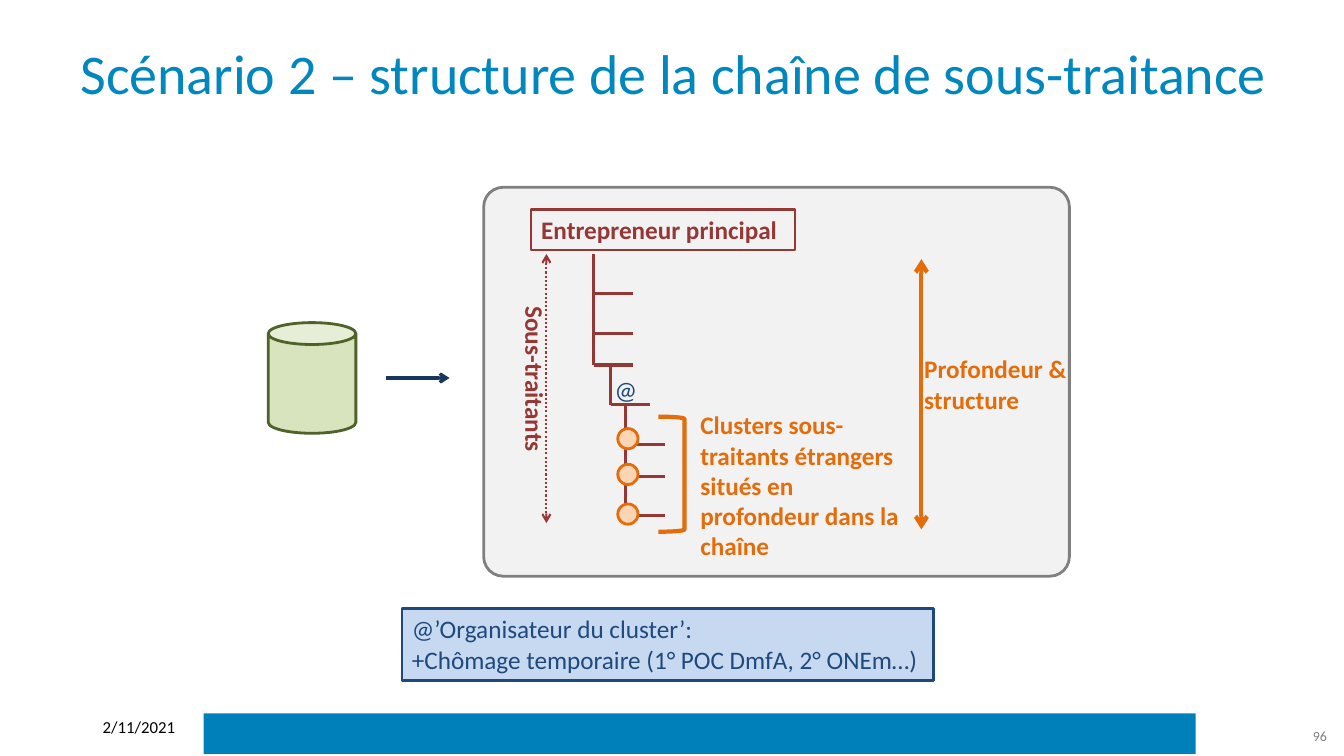
from pptx import Presentation
from pptx.dml.color import RGBColor
from pptx.enum.dml import MSO_LINE
from pptx.enum.shapes import MSO_CONNECTOR, MSO_SHAPE
from pptx.enum.text import MSO_ANCHOR, PP_ALIGN
from pptx.oxml.ns import qn
from pptx.util import Cm, Pt
from lxml import etree

LEFT, CENTER, RIGHT = PP_ALIGN.LEFT, PP_ALIGN.CENTER, PP_ALIGN.RIGHT
TOP, MIDDLE = MSO_ANCHOR.TOP, MSO_ANCHOR.MIDDLE
RECT, ROUND, CAN = MSO_SHAPE.RECTANGLE, MSO_SHAPE.ROUNDED_RECTANGLE, MSO_SHAPE.CAN
OVAL, BRACKET = MSO_SHAPE.OVAL, MSO_SHAPE.RIGHT_BRACKET
STRAIGHT, DOTS = MSO_CONNECTOR.STRAIGHT, MSO_LINE.ROUND_DOT

FONT = "Calibri"
RED, ORANGE, NAVY, GREY = "953735", "E46C0A", "1F497D", "808080"


def rgb(code):
    return RGBColor.from_string(code)


def write(frame, text, size, color, bold=False, align=LEFT, anchor=TOP, wrap=True):
    frame.text = text
    frame.word_wrap = wrap
    frame.vertical_anchor = anchor
    for para in frame.paragraphs:
        para.alignment = align
        for run in para.runs:
            font = run.font
            font.name, font.size, font.bold = FONT, Pt(size), bold
            font.color.rgb = rgb(color)


def shape(slide, kind, x, y, w, h, fill=None, line=None, width=2):
    item = slide.shapes.add_shape(kind, Cm(x), Cm(y), Cm(w), Cm(h))
    item.shadow.inherit = False
    if fill:
        item.fill.solid()
        item.fill.fore_color.rgb = rgb(fill)
    else:
        item.fill.background()
    if line:
        item.line.color.rgb = rgb(line)
        item.line.width = Pt(width)
    else:
        item.line.fill.background()
    return item


def label(slide, x, y, w, h, text, size, color, **style):
    box = slide.shapes.add_textbox(Cm(x), Cm(y), Cm(w), Cm(h))
    write(box.text_frame, text, size, color, **style)
    return box


def line(slide, x1, y1, x2, y2, color, width=2.25, ends=()):
    item = slide.shapes.add_connector(STRAIGHT, Cm(x1), Cm(y1), Cm(x2), Cm(y2))
    item.line.color.rgb = rgb(color)
    item.line.width = Pt(width)
    props = item.line._get_or_add_ln()
    for end in ends:
        etree.SubElement(props, qn("a:" + end), type="arrow")
    etree.SubElement(item._element.spPr, qn("a:effectLst"))
    return item


def title(slide, x, y, w, h):
    head = slide.shapes.title
    head.left, head.top, head.width, head.height = Cm(x), Cm(y), Cm(w), Cm(h)
    frame = head.text_frame
    frame.margin_left = frame.margin_right = 0
    write(frame, "Scénario 2 – structure de la chaîne de sous-traitance",
          40, "0087BE", align=CENTER, anchor=MIDDLE)


def source(slide, x, y, w, h):
    shape(slide, CAN, x, y, w, h, "D7E4BD", "4F6228")
    mid = y + h / 2
    line(slide, x + w + 0.76, mid, x + w + 2.36, mid, "17375E", ends=["tailEnd"])


def tree(slide, x, y):
    # Trunks: offset, top and the heights of their branches
    trunks = [(0, 0, [1, 2, 2.8]), (0.43, 2.8, [3.8]), (0.8, 3.8, [4.8, 5.6, 6.6])]
    for dx, top, levels in trunks:
        line(slide, x + dx, y + top, x + dx, y + levels[-1], RED)
        for level in levels:
            line(slide, x + dx, y + level, x + dx + 1, y + level, RED)

    # Foreign clusters
    shape(slide, BRACKET, x + 1.63, y + 4.1, 0.66, 2.9, line=ORANGE, width=3)
    for dy in (4.4, 5.3, 6.3):
        shape(slide, OVAL, x + 0.61, y + dy, 0.51, 0.51, "FCD5B5", ORANGE)
    label(slide, x + 2.44, y + 3.8, 5.94, 4.1,
          "Clusters sous-traitants étrangers situés en profondeur dans la chaîne",
          18, ORANGE, bold=True)
    label(slide, x + 0.28, y + 2.9, 1.09, 1.02, "@", 18, NAVY, wrap=False)


def panel(slide, x, y, w, h):
    frame = shape(slide, ROUND, x, y, w, h, "F2F2F2", GREY)
    frame.adjustments[0] = 0.05
    tree(slide, x + 2.77, y + 1.68)

    # Main contractor and its subcontractors
    main = shape(slide, RECT, x + 1.2, y + 0.56, 6.65, 1.02, line=RED, width=1.5)
    write(main.text_frame, "Entrepreneur principal", 18, RED, bold=True, wrap=False)
    both = ["headEnd", "tailEnd"]
    span = line(slide, x + 1.58, y + 1.68, x + 1.58, y + 8.46, RED, 1.5, both)
    span.line.dash_style = DOTS
    side = label(slide, x - 0.81, y + 4.35, 4.22, 1.02, "Sous-traitants",
                 18, RED, bold=True, wrap=False)
    side.rotation = 90

    # Depth of the chain
    line(slide, x + 11.03, y + 1.81, x + 11.03, y + 8.62, ORANGE, 3, both)
    label(slide, x + 10.85, y + 4.07, 4.27, 1.8, "Profondeur &\nstructure",
          18, ORANGE, bold=True, wrap=False)


def legend(slide, x, y, w, h):
    box = shape(slide, RECT, x, y, w, h, "C6D9F1", NAVY)
    write(box.text_frame, "@’Organisateur du cluster’:\n"
          "+Chômage temporaire (1° POC DmfA, 2° ONEm…)", 18, NAVY, wrap=False)


def footer(slide, x, y, w, h):
    shape(slide, RECT, x, y, w, h, "0080BB")
    label(slide, x - 2.79, y - 0.05, 3.2, h, "2/11/2021", 12, "000000")
    label(slide, x + w + 0.79, y + 0.05, 2.77, h, "96", 10, GREY,
          align=RIGHT, anchor=MIDDLE)


def main():
    deck = Presentation()
    deck.slide_width, deck.slide_height = Cm(33.87), Cm(19.05)
    slide = deck.slides.add_slide(deck.slide_layouts[5])
    footer(slide, 5.13, 17.98, 25, 1.02)
    title(slide, 1.73, 0.53, 30.48, 2.57)
    source(slide, 6.76, 8.13, 2.21, 2.79)
    panel(slide, 12.19, 4.72, 14.76, 9.8)
    legend(slide, 10.13, 15.34, 13.39, 1.8)
    deck.save("out.pptx")


if __name__ == "__main__":
    main()
